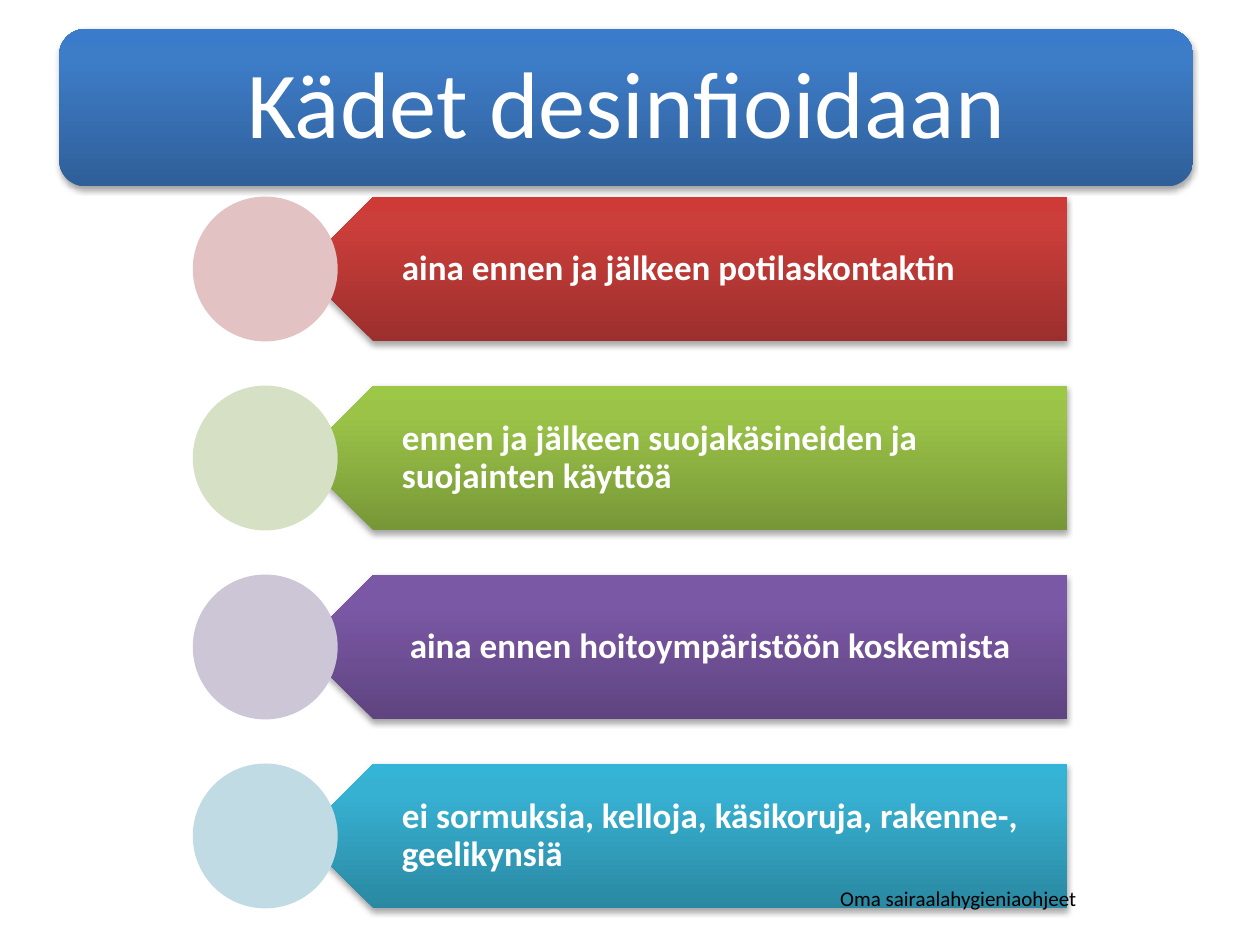
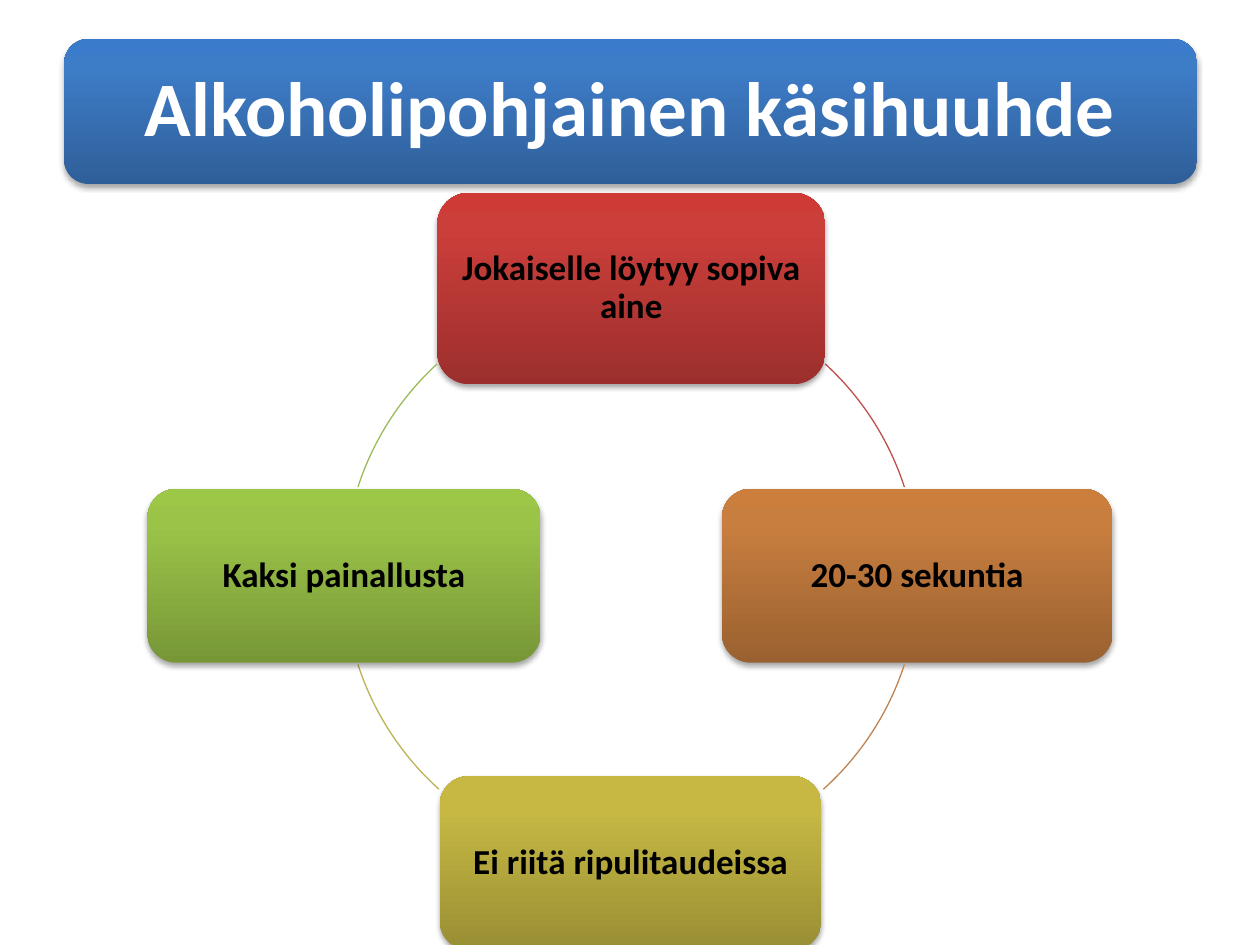
from lxml import etree
from pptx import Presentation
from pptx.dml.color import RGBColor
from pptx.enum.shapes import MSO_SHAPE
from pptx.enum.text import MSO_ANCHOR, MSO_AUTO_SIZE, PP_ALIGN
from pptx.oxml.ns import qn
from pptx.util import Inches, Pt

ROUNDED, PLATE = MSO_SHAPE.ROUNDED_RECTANGLE, MSO_SHAPE.PENTAGON
CIRCLE, ARC = MSO_SHAPE.OVAL, MSO_SHAPE.ARC
LEFT, CENTER = PP_ALIGN.LEFT, PP_ALIGN.CENTER
MIDDLE = MSO_ANCHOR.MIDDLE
NO_FIT = MSO_AUTO_SIZE.NONE
FIT_SHAPE = MSO_AUTO_SIZE.SHAPE_TO_FIT_TEXT
TITLE_ONLY = 5

FONT = "Calibri"
COLORS = {
    "white": "FFFFFF", "black": "000000",
    "pale red": "E2C2C2", "pale green": "D5E0C4",
    "pale purple": "CDC6D7", "pale aqua": "C1DBE5",
    "red line": "C0504D", "orange line": "BE8351",
    "olive line": "BDB255", "green line": "9BBB59",
}
GRADIENTS = {
    "blue": ("2F5F99", "3D7CC7", "3A7CCB"),
    "red": ("9C2F2D", "CB3E3A", "CE3B37"),
    "green": ("779737", "9BC348", "9DC746"),
    "purple": ("5F4480", "7B58A6", "7C57A8"),
    "aqua": ("2A88A2", "37B1D2", "34B4D6"),
    "orange": ("9A6130", "C87E3F", "CC7E3C"),
    "olive": ("988E34", "C6B843", "C9BB41"),
}
STOP_POSITIONS = (0, 80000, 100000)

RULES = (
    ("aina ennen ja jälkeen potilaskontaktin", "red"),
    ("ennen ja jälkeen suojakäsineiden ja suojainten käyttöä", "green"),
    (" aina ennen hoitoympäristöön koskemista", "purple"),
    ("ei sormuksia, kelloja, käsikoruja, rakenne-, geelikynsiä", "aqua"),
)
CYCLE_STEPS = (
    ("Jokaiselle löytyy sopiva aine", "red", (0.74, -0.76, 3.08, 1.52), (312.5, 342)),
    ("20-30 sekuntia", "orange", (3.0, 1.59, 3.1, 1.38), (18, 48)),
    ("Ei riitä ripulitaudeissa", "olive", (0.76, 3.87, 3.03, 1.38), (132, 162)),
    ("Kaksi painallusta", "green", (-1.56, 1.59, 3.12, 1.38), (198, 227.5)),
)


def color(name):
    """Return the named colour."""
    return RGBColor.from_string(COLORS[name])


def add_plain_shape(slide, kind, box):
    """Add a preset shape without outline or shadow."""
    shape = slide.shapes.add_shape(kind, *map(Inches, box))
    shape.shadow.inherit = False
    shape.line.fill.background()
    return shape


def add_glossy_shape(slide, kind, box, gradient):
    """Add a shape with a three-stop vertical gradient and a soft shadow."""
    shape = add_plain_shape(slide, kind, box)
    shape.fill.gradient()
    properties = shape.element.spPr
    gradient_fill = properties.find(qn("a:gradFill"))
    gradient_fill.set("rotWithShape", "0")
    stops = gradient_fill.find(qn("a:gsLst"))
    for stop in list(stops):
        stops.remove(stop)
    for position, value in zip(STOP_POSITIONS, GRADIENTS[gradient]):
        stop = etree.SubElement(stops, qn("a:gs"), pos=str(position))
        etree.SubElement(stop, qn("a:srgbClr"), val=value)
    shadow = etree.SubElement(
        properties.find(qn("a:effectLst")), qn("a:outerShdw"),
        blurRad="40000", dist="23000", dir="5400000", rotWithShape="0")
    shadow_color = etree.SubElement(shadow, qn("a:srgbClr"), val=COLORS["black"])
    etree.SubElement(shadow_color, qn("a:alpha"), val="35000")
    return shape


def write_text(shape, text, size, color_name, bold=True, align=CENTER,
               insets=(0.08, 0.08, 0.08, 0.08)):
    """Write one vertically centred paragraph into a shape."""
    frame = shape.text_frame
    frame.word_wrap = True
    frame.auto_size = NO_FIT
    frame.vertical_anchor = MIDDLE
    (frame.margin_left, frame.margin_top,
     frame.margin_right, frame.margin_bottom) = map(Inches, insets)
    paragraph = frame.paragraphs[0]
    paragraph.text = text
    paragraph.alignment = align
    paragraph.line_spacing = 0.9
    font = paragraph.font
    font.name, font.size, font.bold = FONT, Pt(size), bold
    font.color.rgb = color(color_name)


def add_title_banner(slide, box, text, size, bold, inset):
    """Place the slide title over a blue banner."""
    banner = add_glossy_shape(slide, ROUNDED, box, "blue")
    title = slide.shapes.title
    title.element.addprevious(banner.element)
    left, top, width, height = box
    edge = 0.06
    title.left, title.top = Inches(left + edge), Inches(top + edge)
    title.width, title.height = Inches(width - 2 * edge), Inches(height - 2 * edge)
    write_text(title, text, size, "white", bold, insets=(inset,) * 4)


def add_rule_row(slide, left, top, text, tone):
    """Add an arrow plate with its text and the pale circle at its tip."""
    size = 1.15
    plate = add_glossy_shape(slide, PLATE, (left + 0.86, top, 6.08, size), tone)
    plate.rotation = 180
    label = slide.shapes.add_textbox(
        *map(Inches, (left + size, top, 5.79, size)))
    write_text(label, text, 20, "white", align=LEFT,
               insets=(0.51, 0.08, 0.16, 0.08))
    circle = add_plain_shape(slide, CIRCLE, (left, top, size, size))
    circle.fill.solid()
    circle.fill.fore_color.rgb = color(f"pale {tone}")


def add_source_note(slide, box, text):
    """Add the small source note."""
    note = slide.shapes.add_textbox(*map(Inches, box))
    note.text_frame.word_wrap = False
    note.text_frame.auto_size = FIT_SHAPE
    paragraph = note.text_frame.paragraphs[0]
    paragraph.text = text
    paragraph.font.name, paragraph.font.size = FONT, Pt(12)
    paragraph.font.color.rgb = color("black")


def add_cycle(slide, left, top, diameter):
    """Add the cards of the cycle and the arcs that join them."""
    for text, tone, (offset_x, offset_y, width, height), angles in CYCLE_STEPS:
        card_box = (left + offset_x, top + offset_y, width, height)
        card = add_glossy_shape(slide, ROUNDED, card_box, tone)
        write_text(card, text, 20, "black")
        arc = add_plain_shape(slide, ARC, (left, top, diameter, diameter))
        arc.fill.background()
        for index, angle in enumerate(angles):
            arc.adjustments[index] = angle * 0.6
        arc.line.color.rgb = color(f"{tone} line")
        arc.line.width = Pt(0.75)


def build_rules_slide(slide):
    """Build the slide on when hands are disinfected."""
    add_title_banner(slide, (0.47, 0.23, 9, 1.25), "Kädet desinfioidaan",
                     54, False, 0.23)
    for index, (text, tone) in enumerate(RULES):
        add_rule_row(slide, 1.53, 1.56 + 1.5 * index, text, tone)
    add_source_note(slide, (6.57, 6.98, 2.19, 0.3), "Oma sairaalahygieniaohjeet")


def build_cycle_slide(slide):
    """Build the slide on the alcohol hand rub."""
    add_title_banner(slide, (0.51, 0.31, 8.99, 1.15),
                     "Alkoholipohjainen käsihuuhde", 44, True, 0.18)
    add_cycle(slide, 2.73, 2.29, 4.56)


def main():
    """Create the presentation and save it."""
    presentation = Presentation()
    presentation.slide_width, presentation.slide_height = Inches(10), Inches(7.5)
    layout = presentation.slide_layouts[TITLE_ONLY]
    for build in (build_rules_slide, build_cycle_slide):
        build(presentation.slides.add_slide(layout))
    presentation.save("out.pptx")


if __name__ == "__main__":
    main()
